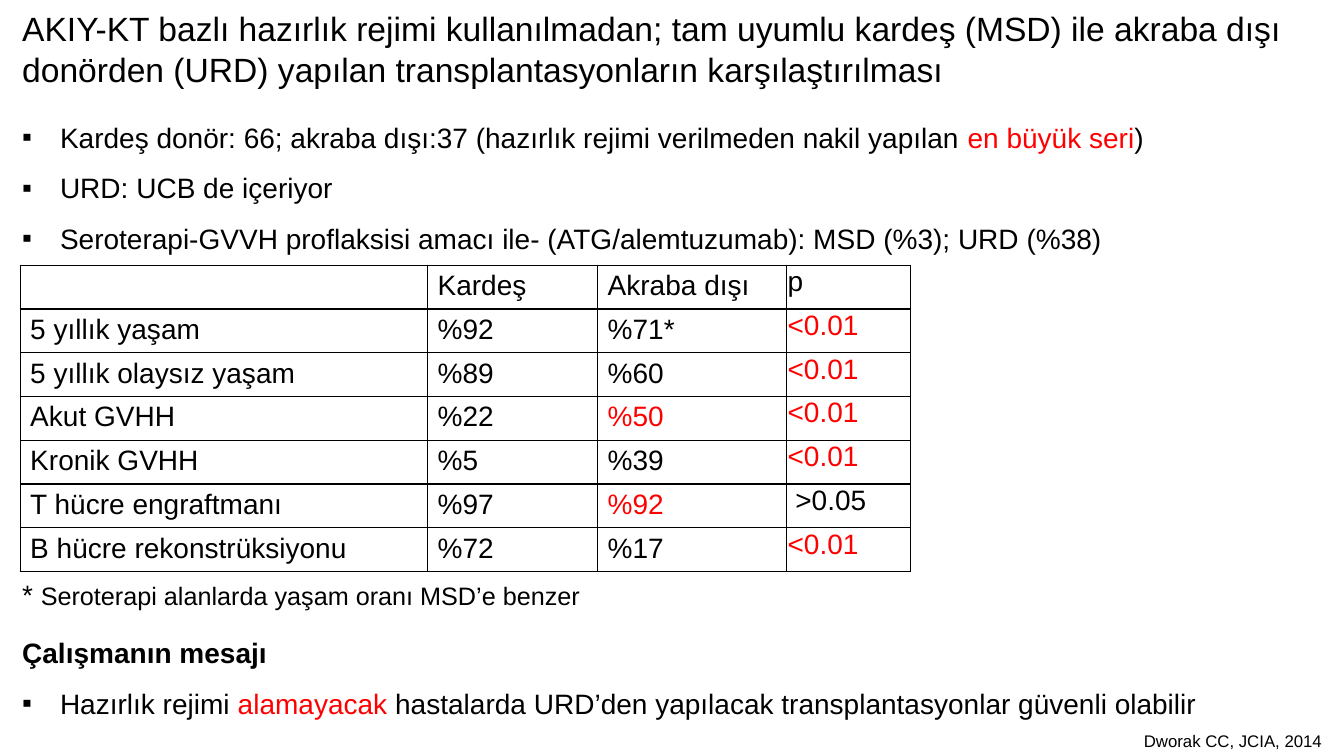
"""Build a slide comparing sibling and unrelated donor transplants."""
import pptx
import pptx.dml.color
import pptx.enum.text
import pptx.oxml.ns
import pptx.util
from lxml import etree

Pt = pptx.util.Pt
COLORS = {"text": "000000", "accent": "FF0000", "border": "000000"}
FONT = "Arial"
RED = {"color": "accent"}

TITLE = ("AKIY-KT bazlı hazırlık rejimi kullanılmadan; tam uyumlu kardeş (MSD) ile akraba dışı "
         "donörden (URD) yapılan transplantasyonların karşılaştırılması")
FINDINGS = [
    [("Kardeş donör: 66; akraba dışı:37 (hazırlık rejimi verilmeden nakil yapılan ", {}),
     ("en büyük seri", RED), (")", {})],
    [("URD: UCB de içeriyor", {})],
    [("Seroterapi-GVVH proflaksisi amacı ile- (ATG/alemtuzumab): MSD (%3); URD (%38)", {})],
]
MESSAGE = [
    [("Çalışmanın mesajı", {"bold": True})],
    [("Hazırlık rejimi ", {}), ("alamayacak", RED),
     (" hastalarda URD’den yapılacak transplantasyonlar güvenli olabilir", {})],
]
OUTCOMES = [
    ("", "Kardeş", "Akraba dışı", "p"),
    ("5 yıllık yaşam", "%92", "%71*", "<0.01"),
    ("5 yıllık olaysız yaşam", "%89", "%60", "<0.01"),
    ("Akut GVHH", "%22", "%50", "<0.01"),
    ("Kronik GVHH", "%5", "%39", "<0.01"),
    ("T hücre engraftmanı", "%97", "%92", " >0.05"),
    ("B hücre rekonstrüksiyonu", "%72", "%17", "<0.01"),
]
RED_VALUES = {"<0.01", "%50", "%92"}
RED_COLUMNS = {2, 3}
COLUMN_WIDTHS = (291, 121.5, 135, 88.5)
ROW_HEIGHT = 31.25
FOOTNOTE = [("* ", {}), ("Seroterapi alanlarda yaşam oranı MSD’e benzer", {"size": 18})]
CREDIT = "Dworak CC, JCIA, 2014"
LEFT = 8.64


def add_text(p, text, size=20, color="text", bold=False):
    """Add a formatted run to a paragraph."""
    r = p.add_run()
    r.text = text
    r.font.name = FONT
    r.font.size = Pt(size)
    r.font.bold = bold
    r.font.color.rgb = pptx.dml.color.RGBColor.from_string(COLORS[color])


def add_xml(parent, tag, **attributes):
    """Append a DrawingML element to its parent."""
    return etree.SubElement(parent, pptx.oxml.ns.qn(tag), **attributes)


def place(sp, left, top, width, height, wrap=True):
    """Position a text shape and return its text frame."""
    sp.left, sp.top, sp.width, sp.height = map(Pt, (left, top, width, height))
    tf = sp.text_frame
    tf.word_wrap = wrap
    tf.auto_size = pptx.enum.text.MSO_AUTO_SIZE.NONE
    tf.vertical_anchor = pptx.enum.text.MSO_ANCHOR.TOP
    return tf


def fill_list(tf, paragraphs, heading=False):
    """Fill a body with bulleted paragraphs, the first optionally a heading."""
    for i, runs in enumerate(paragraphs):
        p = tf.paragraphs[0] if i == 0 else tf.add_paragraph()
        p.line_spacing = 1.5
        p.space_before = p.space_after = Pt(0)
        pPr = p._p.get_or_add_pPr()
        bulleted = i > 0 or not heading
        indent = Pt(27) if bulleted else 0
        pPr.set("marL", str(indent))
        pPr.set("indent", str(-indent))
        if bulleted:
            add_xml(pPr, "a:buFont", typeface=FONT)
            add_xml(pPr, "a:buChar", char="▪")
        else:
            add_xml(pPr, "a:buNone")
        for text, style in runs:
            add_text(p, text, **style)


def add_borders(cell):
    """Draw a thin line on every side of a table cell."""
    tcPr = cell._tc.get_or_add_tcPr()
    for i, side in enumerate(("a:lnL", "a:lnR", "a:lnT", "a:lnB")):
        ln = etree.Element(pptx.oxml.ns.qn(side), w=str(Pt(1)))
        add_xml(add_xml(ln, "a:solidFill"), "a:srgbClr", val=COLORS["border"])
        tcPr.insert(i, ln)


def add_outcomes(slide):
    """Add the table of outcomes by donor type."""
    rows, columns = len(OUTCOMES), len(COLUMN_WIDTHS)
    table = slide.shapes.add_table(rows, columns, Pt(14.4), Pt(189.5),
                                   Pt(sum(COLUMN_WIDTHS)), Pt(rows * ROW_HEIGHT)).table
    table.first_row = table.horz_banding = False
    for column, width in zip(table.columns, COLUMN_WIDTHS):
        column.width = Pt(width)
    for i, values in enumerate(OUTCOMES):
        table.rows[i].height = Pt(ROW_HEIGHT)
        for j, value in enumerate(values):
            cell = table.cell(i, j)
            cell.fill.background()
            add_borders(cell)
            if j == columns - 1:
                cell.margin_left = cell.margin_right = cell.margin_top = Pt(0.75)
                cell.margin_bottom = 0
            if value:
                red = j in RED_COLUMNS and value in RED_VALUES
                add_text(cell.text_frame.paragraphs[0], value, color="accent" if red else "text")


def main():
    """Assemble and save the slide."""
    prs = pptx.Presentation()
    prs.slide_width, prs.slide_height = Pt(960), Pt(540)
    slide = prs.slides.add_slide(prs.slide_layouts[3])
    title, findings, message = slide.placeholders

    p = place(title, LEFT, 2.2, 922.5, 65.5).paragraphs[0]
    p.alignment = pptx.enum.text.PP_ALIGN.LEFT
    add_text(p, TITLE, size=24)

    fill_list(place(findings, LEFT, 70.5, 903, 116.5), FINDINGS)
    fill_list(place(message, LEFT, 438.5, 951, 80), MESSAGE, heading=True)
    add_outcomes(slide)

    footnote = slide.shapes.add_textbox(0, 0, 0, 0)
    p = place(footnote, LEFT, 409, 876, 31.5).paragraphs[0]
    for text, style in FOOTNOTE:
        add_text(p, text, **style)

    credit = slide.shapes.add_textbox(0, 0, 0, 0)
    p = place(credit, 810, 518.4, 149, 21.6, wrap=False).paragraphs[0]
    add_text(p, CREDIT, size=12)

    prs.save("out.pptx")


if __name__ == "__main__":
    main()
